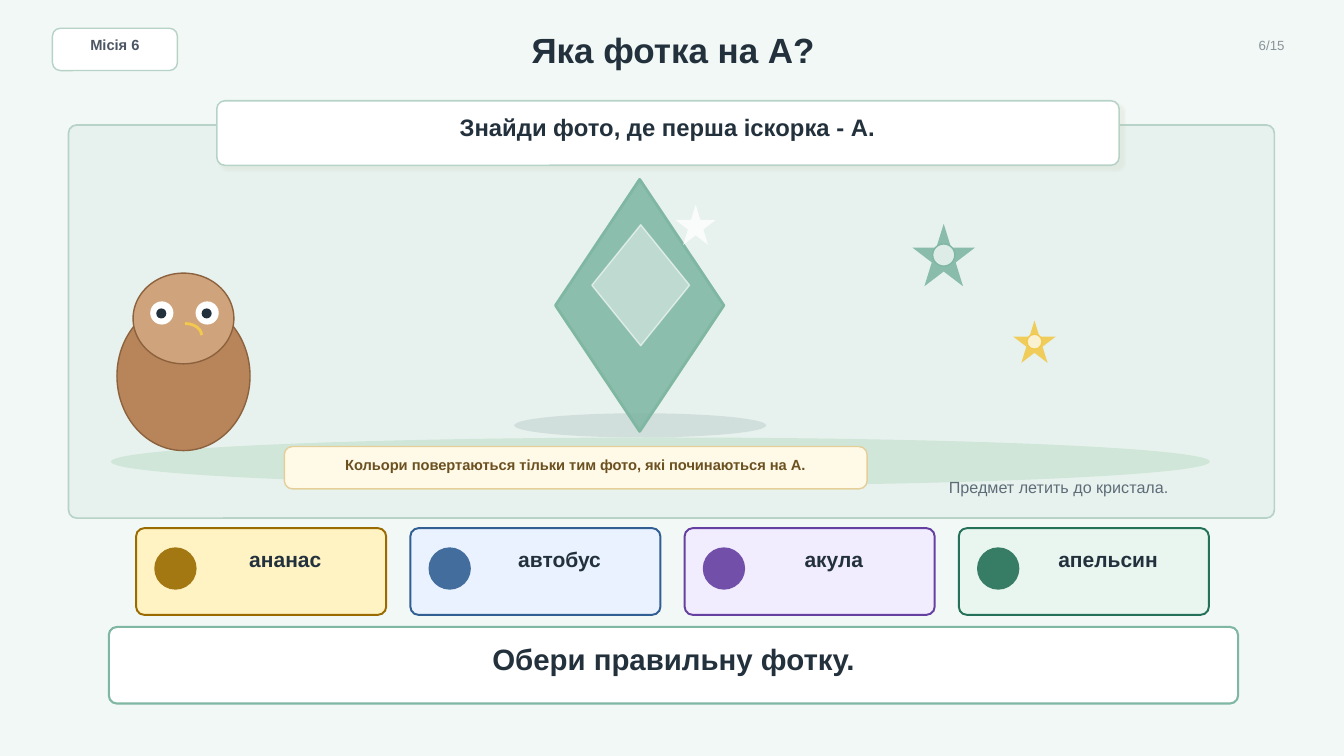
"""Build the "Яка фотка на А?" quiz slide."""
from dataclasses import dataclass
from typing import Optional

from lxml import etree
from pptx import Presentation
from pptx.dml.color import RGBColor
from pptx.enum.shapes import MSO_SHAPE as Shp
from pptx.enum.text import MSO_ANCHOR as Anchor, PP_ALIGN as Align
from pptx.oxml.ns import qn
from pptx.util import Inches, Pt

INK, SAGE, MINT, WHITE, GOLD = "23313D", "7FB7A3", "B7D3C7", "FFFFFF", "F2C94C"
BROWN, CORNER = "8C623E", 0.08


@dataclass
class Figure:
    kind: Shp
    x: float
    y: float
    w: float
    h: float
    fill: Optional[str] = None
    line: Optional[str] = None
    width: float = 1
    alpha: int = 100
    line_alpha: int = 100
    shadow: bool = False


@dataclass
class Label:
    text: str
    x: float
    y: float
    w: float
    h: float
    size: float
    color: str = INK
    bold: bool = True
    align: Align = Align.CENTER


@dataclass
class Card:
    word: str
    fill: str
    accent: str


def rgb(color: str) -> RGBColor:
    return RGBColor.from_string(color)


def set_alpha(parent, percent: int) -> None:
    if percent < 100:
        clr = parent.find(qn("a:solidFill"))[0]
        etree.SubElement(clr, qn("a:alpha"), val=str(percent * 1000))


def add_shadow(spPr) -> None:
    effects = spPr.find(qn("a:effectLst"))
    shadow = etree.SubElement(effects, qn("a:outerShdw"), blurRad=str(Pt(1)),
                              dist=str(Pt(4)), dir=str(45 * 60000),
                              algn="ctr", rotWithShape="0")
    clr = etree.SubElement(shadow, qn("a:srgbClr"), val="C8C1B0")
    etree.SubElement(clr, qn("a:alpha"), val="16000")


def draw_figure(s, f: Figure) -> None:
    sp = s.shapes.add_shape(f.kind, Inches(f.x), Inches(f.y), Inches(f.w), Inches(f.h))
    sp.shadow.inherit = False
    spPr = sp._element.spPr
    if f.kind == Shp.ROUNDED_RECTANGLE:
        sp.adjustments[0] = CORNER / min(f.w, f.h)
    if f.fill:
        sp.fill.solid()
        sp.fill.fore_color.rgb = rgb(f.fill)
        set_alpha(spPr, f.alpha)
    else:
        sp.fill.background()
    if f.line:
        sp.line.color.rgb = rgb(f.line)
        sp.line.width = Pt(f.width)
        set_alpha(spPr.find(qn("a:ln")), f.line_alpha)
    else:
        sp.line.fill.background()
    if f.shadow:
        add_shadow(spPr)


def draw_label(s, t: Label) -> None:
    tf = s.shapes.add_textbox(Inches(t.x), Inches(t.y), Inches(t.w), Inches(t.h)).text_frame
    tf.word_wrap = True
    tf.vertical_anchor = Anchor.MIDDLE
    tf.margin_left = tf.margin_right = tf.margin_top = tf.margin_bottom = 0
    tf.text = t.text
    p = tf.paragraphs[0]
    p.alignment = t.align
    font = p.runs[0].font
    font.name, font.size, font.bold = "Arial", Pt(t.size), t.bold
    font.color.rgb = rgb(t.color)


def owl() -> list[Figure]:
    eyes = [(Figure(Shp.OVAL, x, 2.99, 0.23, 0.23, WHITE),
             Figure(Shp.OVAL, x + 0.06, 3.06, 0.1, 0.1, INK)) for x in (1.49, 1.94)]
    return [
        Figure(Shp.OVAL, 1.16, 2.99, 1.32, 1.48, "B8845A", BROWN),
        Figure(Shp.OVAL, 1.32, 2.71, 1, 0.9, "CFA47C", BROWN),
        *(part for eye in eyes for part in eye),
        Figure(Shp.ARC, 1.67, 3.21, 0.33, 0.23, line=GOLD, width=2),
    ]


def spark(x: float, y: float, size: float, core: float, color: str) -> list[Figure]:
    inset = (size - core) / 2
    return [
        Figure(Shp.STAR_5_POINT, x, y, size, size, color, alpha=90),
        Figure(Shp.OVAL, x + inset, y + inset, core, core, WHITE, color, alpha=72),
    ]


def card_items(index: int, card: Card) -> list:
    x = 1.35 + index * 2.72
    return [
        Figure(Shp.ROUNDED_RECTANGLE, x, 5.24, 2.48, 0.86, card.fill, card.accent, 1.4),
        Figure(Shp.OVAL, x + 0.18, 5.43, 0.42, 0.42, card.accent, alpha=90),
        Label(card.word, x + 0.66, 5.38, 1.64, 0.34, 15),
    ]


CARDS = [
    Card("ананас", "FFF3C4", "9A6B00"),
    Card("автобус", "EAF2FF", "315F93"),
    Card("акула", "F2ECFF", "6540A0"),
    Card("апельсин", "E9F6F0", "247058"),
]

ITEMS = [
    Figure(Shp.ROUNDED_RECTANGLE, 0.52, 0.28, 1.24, 0.42, WHITE, MINT),
    Label("Місія 6", 0.62, 0.37, 1.04, 0.15, 10.5, "4B5563"),
    Label("Яка фотка на А?", 2, 0.25, 9.35, 0.48, 25),
    Label("6/15", 12.02, 0.37, 0.72, 0.16, 9.5, "8A929A", False, Align.RIGHT),
    Figure(Shp.ROUNDED_RECTANGLE, 0.68, 1.24, 11.96, 3.9, "E7F2EE", MINT, 1.2),
    Figure(Shp.OVAL, 1.1, 4.34, 10.9, 0.48, "CFE6D7", alpha=92),
    *owl(),
    Figure(Shp.OVAL, 5.1, 4.1, 2.5, 0.24, "C9D9D5", alpha=75),
    Figure(Shp.DIAMOND, 5.51, 1.78, 1.67, 2.5, SAGE, SAGE, 2, alpha=88),
    Figure(Shp.DIAMOND, 5.87, 2.23, 0.97, 1.2, WHITE, WHITE, alpha=45, line_alpha=60),
    Figure(Shp.STAR_5_POINT, 6.7, 2.03, 0.4, 0.4, WHITE, alpha=82),
    *spark(9.05, 2.22, 0.62, 0.22, SAGE),
    *spark(10.05, 3.18, 0.42, 0.15, GOLD),
    Figure(Shp.ROUNDED_RECTANGLE, 2.15, 1, 8.95, 0.64, WHITE, MINT, 1.1, shadow=True),
    Label("Знайди фото, де перша іскорка - А.", 2.38, 1.13, 8.48, 0.26, 17),
    Figure(Shp.ROUNDED_RECTANGLE, 2.82, 4.43, 5.78, 0.42, "FFF9E8", "E4CF98"),
    Label("Кольори повертаються тільки тим фото, які починаються на А.",
          2.98, 4.52, 5.46, 0.18, 10.5, "6B5120"),
    Figure(Shp.ROUNDED_RECTANGLE, 1.08, 6.22, 11.2, 0.76, WHITE, SAGE, 1.5),
    Label("Обери правильну фотку.", 1.34, 6.39, 10.68, 0.28, 21),
    *(item for i, card in enumerate(CARDS) for item in card_items(i, card)),
    Label("Предмет летить до кристала.", 9, 4.72, 3, 0.22, 11.5, "5E6C78", False),
]


def main() -> None:
    prs = Presentation()
    prs.slide_width, prs.slide_height = Inches(13.33), Inches(7.5)
    s = prs.slides.add_slide(prs.slide_layouts[6])
    s.background.fill.solid()
    s.background.fill.fore_color.rgb = rgb("F2F8F5")
    for item in ITEMS:
        if isinstance(item, Figure):
            draw_figure(s, item)
        else:
            draw_label(s, item)
    prs.save("out.pptx")


if __name__ == "__main__":
    main()
